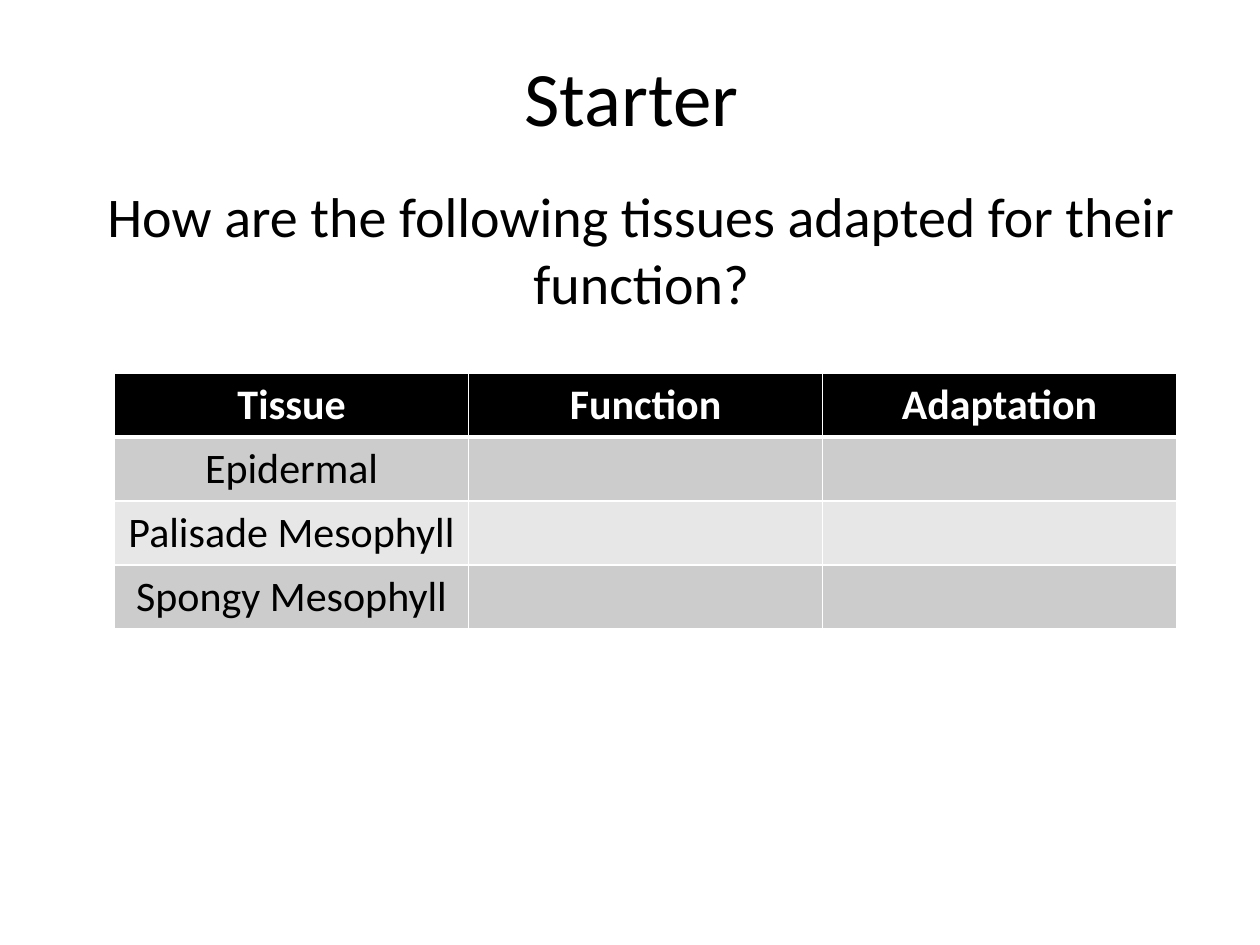
from lxml.etree import SubElement
from pptx import Presentation
from pptx.dml.color import RGBColor as Rgb
from pptx.enum.text import MSO_ANCHOR as Anchor, PP_ALIGN as Align
from pptx.oxml.ns import qn
from pptx.util import Cm, Pt

COLORS = {
    "ink": "000000",
    "paper": "FFFFFF",
    "odd": "CCCCCC",
    "even": "E7E7E7",
}
HEADS = ["Tissue", "Function", "Adaptation"]
TISSUES = ["Epidermal", "Palisade Mesophyll", "Spongy Mesophyll"]


def color(name):
    return Rgb.from_string(COLORS[name])


def write(frame, text, size, tint="ink", bold=False):
    frame.text = text
    para = frame.paragraphs[0]
    para.alignment = Align.CENTER
    for font in [para.font] + [run.font for run in para.runs]:
        font.name = "Calibri"
        font.size = Pt(size)
        font.bold = bold
        font.color.rgb = color(tint)


def add_text(slide, text, size, box, anchor):
    frame = slide.shapes.add_textbox(*map(Cm, box)).text_frame
    frame.word_wrap = True
    frame.vertical_anchor = anchor
    write(frame, text, size)


def add_edge(cell, side, width):
    line = SubElement(cell._tc.get_or_add_tcPr(), qn(f"a:ln{side}"), w=str(Pt(width)))
    fill = SubElement(line, qn("a:solidFill"))
    SubElement(fill, qn("a:srgbClr"), val=COLORS["paper"])


def style_cell(cell, text, row):
    head = row == 0
    write(cell.text_frame, text, 24, "paper" if head else "ink", head)
    for side in "LRTB":
        thick = (row, side) in [(0, "B"), (1, "T")]
        add_edge(cell, side, 3 if thick else 1)
    cell.fill.solid()
    cell.fill.fore_color.rgb = color("ink" if head else "odd" if row % 2 else "even")


def add_grid(slide):
    rows = [HEADS] + [[name, "", ""] for name in TISSUES]
    box = map(Cm, (2.31, 7.52, 21.41, 5.16))
    table = slide.shapes.add_table(len(rows), len(HEADS), *box).table
    for r, texts in enumerate(rows):
        for c, text in enumerate(texts):
            style_cell(table.cell(r, c), text, r)


def main():
    deck = Presentation()
    deck.slide_width, deck.slide_height = Cm(25.4), Cm(19.05)
    slide = deck.slides.add_slide(deck.slide_layouts[6])
    add_text(slide, "Starter", 44, (1.3, 0.33, 22.86, 3.18), Anchor.MIDDLE)
    ask = "How are the following tissues adapted for their function?"
    add_text(slide, ask, 32, (1.5, 3.53, 22.86, 3.2), Anchor.TOP)
    add_grid(slide)
    deck.save("out.pptx")


if __name__ == "__main__":
    main()
